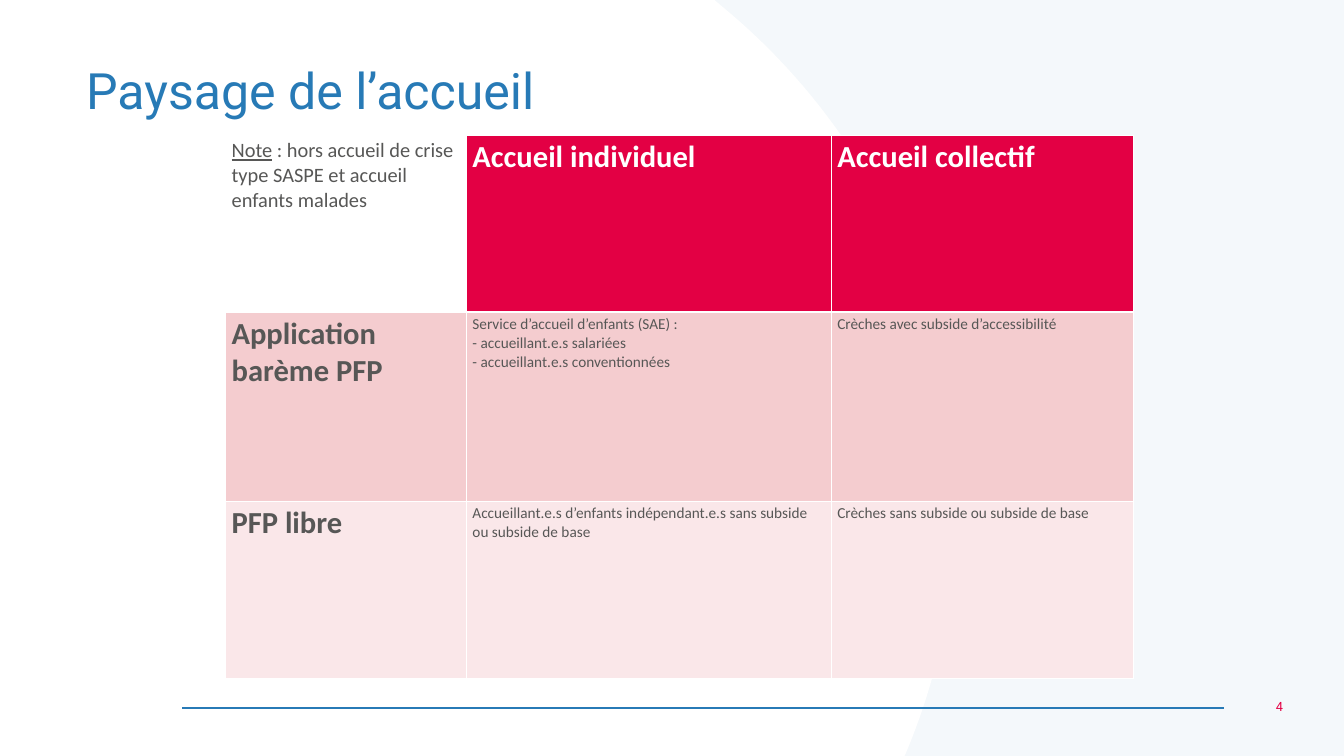
from pptx import Presentation
from pptx.dml.color import RGBColor
from pptx.enum.shapes import MSO_CONNECTOR as Connector
from pptx.enum.text import MSO_ANCHOR as Anchor, PP_ALIGN as Align
from pptx.oxml.ns import qn
from pptx.util import Inches, Pt
from lxml.etree import SubElement

WIDTH, HEIGHT = Inches(21.99), Inches(12.37)
BLUE, RED, GREY, WHITE = "277AB6", "E30044", "575756", "FFFFFF"
PALE_BLUE, PINK, PALE_PINK = "F4F8FB", "F4CCCF", "FAE7E9"

COLUMNS = [17.92, 27.15, 22.51]
ROWS = [23.44, 24.98, 23.44]
ROW_FILLS = [RED, PINK, PALE_PINK]
CARE_TYPES = [
    [" : hors accueil de crise type SASPE et accueil enfants malades",
     "Accueil individuel", "Accueil collectif"],
    ["Application barème PFP",
     "Service d’accueil d’enfants (SAE) :\v- accueillant.e.s salariées\n"
     "- accueillant.e.s conventionnées",
     "Crèches avec subside d’accessibilité"],
    ["PFP libre",
     "Accueillant.e.s d’enfants indépendant.e.s sans subside ou subside de base",
     "Crèches sans subside ou subside de base"],
]


def across(percent):
    return round(WIDTH * percent / 100)


def down(percent):
    return round(HEIGHT * percent / 100)


def rgb(code):
    return RGBColor.from_string(code)


def write(frame, text, size, color, font="Calibri", bold=False, align=Align.LEFT,
          spacing=None, underlined=""):
    frame.word_wrap = True
    for index, line in enumerate(text.split("\n")):
        paragraph = frame.paragraphs[0] if index == 0 else frame.add_paragraph()
        paragraph.alignment = align
        paragraph.line_spacing = spacing
        if underlined:
            lead = paragraph.add_run()
            lead.text = underlined
            lead.font.underline = True
            paragraph.add_run().text = line
        else:
            paragraph.text = line
        for run in paragraph.runs:
            run.font.name = font
            run.font.size = Pt(size)
            run.font.bold = bold
            run.font.color.rgb = rgb(color)


def add_label(slide, left, top, width, height, text, **style):
    frame = slide.shapes.add_textbox(
        across(left), down(top), across(width), down(height)).text_frame
    frame.margin_left = frame.margin_right = Inches(0.1)
    frame.margin_top = frame.margin_bottom = 0
    frame.vertical_anchor = Anchor.MIDDLE
    write(frame, text, **style)


def curve_points(start, pull_out, pull_in, end, steps=40):
    for step in range(1, steps + 1):
        t = step / steps
        weights = (1 - t) ** 3, 3 * t * (1 - t) ** 2, 3 * t * t * (1 - t), t ** 3
        yield tuple(sum(w * point[axis] for w, point in
                        zip(weights, (start, pull_out, pull_in, end)))
                    for axis in (0, 1))


def add_white_panel(slide):
    foot, belly, crown = (67.39, 99.68), (71.17, 66.53), (53.75, 0.89)
    outline = [(67.3, 100), foot,
               *curve_points(foot, (69.8, 89.49), (71.17, 78.25), belly),
               *curve_points(belly, (71.17, 40.1), (64.39, 16.49), crown),
               (53.16, 0), (0, 0)]
    builder = slide.shapes.build_freeform(0, HEIGHT)
    builder.add_line_segments([(across(x), down(y)) for x, y in outline], close=True)
    panel = builder.convert_to_shape()
    panel.shadow.inherit = False
    panel.fill.solid()
    panel.fill.fore_color.rgb = rgb(WHITE)
    panel.line.fill.background()


def add_footer_rule(slide):
    rule = slide.shapes.add_connector(
        Connector.STRAIGHT, across(13.55), down(93.69), across(91.04), down(93.69))
    rule.line.color.rgb = rgb(BLUE)
    rule.line.width = Pt(2)
    SubElement(rule._element.spPr, qn("a:effectLst"))


def set_borders(cell, bottom):
    properties = cell._tc.get_or_add_tcPr()
    widths = {"a:lnL": 1, "a:lnR": 1, "a:lnT": 1, "a:lnB": bottom}
    for position, (side, width) in enumerate(widths.items()):
        border = SubElement(properties, qn(side), w=str(Pt(width)))
        fill = SubElement(border, qn("a:solidFill"))
        SubElement(fill, qn("a:srgbClr"), val=WHITE)
        properties.insert(position, border)


def cell_style(row, column):
    if row == column == 0:
        return dict(size=24, color=GREY, underlined="Note")
    if row == 0:
        return dict(size=36, color=WHITE, bold=True)
    if column == 0:
        return dict(size=36, color=GREY, bold=True)
    return dict(size=18, color=GREY)


def add_care_table(slide):
    table = slide.shapes.add_table(
        len(ROWS), len(COLUMNS), across(16.78), down(17.87),
        across(sum(COLUMNS)), down(sum(ROWS))).table
    table.horz_banding = False
    for column, width in zip(table.columns, COLUMNS):
        column.width = across(width)
    for r, (row, height) in enumerate(zip(table.rows, ROWS)):
        row.height = down(height)
        for c, cell in enumerate(row.cells):
            if r == c == 0:
                cell.fill.background()
            else:
                cell.fill.solid()
                cell.fill.fore_color.rgb = rgb(ROW_FILLS[r])
            set_borders(cell, bottom=3 if r == 0 else 1)
            write(cell.text_frame, CARE_TYPES[r][c], **cell_style(r, c))


def main():
    deck = Presentation()
    deck.slide_width, deck.slide_height = WIDTH, HEIGHT
    slide = deck.slides.add_slide(deck.slide_layouts[6])
    slide.background.fill.solid()
    slide.background.fill.fore_color.rgb = rgb(PALE_BLUE)
    add_white_panel(slide)
    add_label(slide, 91.04, 92, 4.87, 2.83, "4",
              size=15, color=RED, font="Roboto", align=Align.RIGHT)
    add_footer_rule(slide)
    add_label(slide, 5.96, 8.57, 73.03, 7.52, "Paysage de l’accueil",
              size=59, color=BLUE, font="Roboto", spacing=0.9)
    add_care_table(slide)
    deck.save("out.pptx")


if __name__ == "__main__":
    main()
